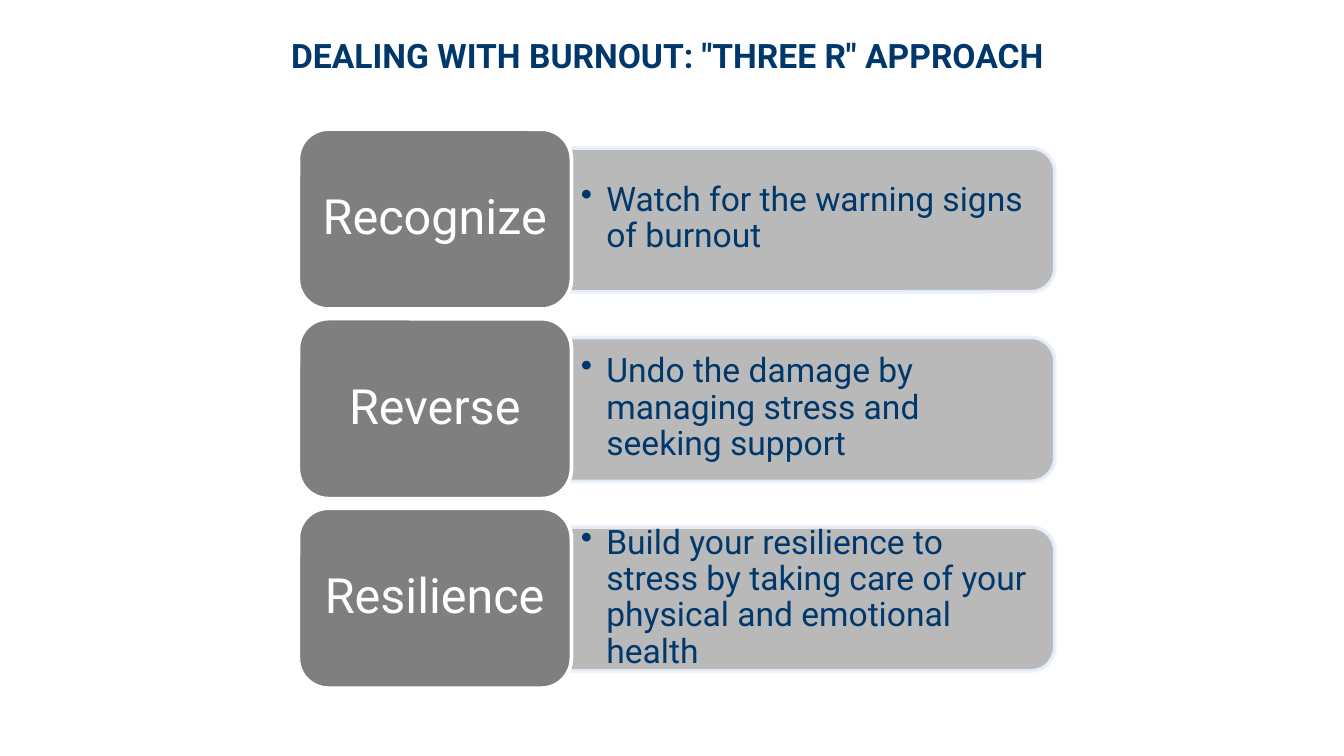
from dataclasses import dataclass

from lxml import etree
from pptx import Presentation, util as u
from pptx.dml.color import RGBColor
from pptx.enum import shapes as sh, text as tx
from pptx.oxml.ns import qn

HUES = {"navy": "00386B", "card": "7F7F7F", "panel": "B2B2B2",
        "edge": "EAF1F9", "white": "FFFFFF"}
PITCH = 3.58


@dataclass
class Step:
    name: str
    note: str


@dataclass
class Box:
    left: float
    top: float
    width: float
    height: float

    def down(self, gap: float) -> tuple:
        return tuple(u.Cm(v) for v in (self.left, self.top + gap, self.width, self.height))


CARD = Box(5.64, 2.44, 5.16, 3.4)
PANEL = Box(13.99, -0.43, 2.72, 9.17)
NOTE = Box(10.8, 2.9, 9.02, 2.46)
TITLE = Box(3.23, 0.64, 18.77, 0.79)

STEPS = [
    Step("Recognize", "Watch for the warning signs of burnout"),
    Step("Reverse", "Undo the damage by managing stress and seeking support"),
    Step("Resilience", "Build your resilience to stress by taking care of your "
                       "physical and emotional health"),
]


def hue(name: str) -> RGBColor:
    return RGBColor.from_string(HUES[name])


def apply(item, props: dict) -> None:
    for key, value in props.items():
        setattr(item, key, value)


def write(shape, words: str, size: int, color: str, pad: tuple, bold: bool = False,
          align=tx.PP_ALIGN.CENTER, bullet: bool = False, space: float = 0.9) -> None:
    frame = shape.text_frame
    side, edge = (u.Cm(v) for v in pad)
    apply(frame, {"text": words, "word_wrap": True, "auto_size": tx.MSO_AUTO_SIZE.NONE,
                  "vertical_anchor": tx.MSO_ANCHOR.MIDDLE,
                  "margin_left": side, "margin_right": side,
                  "margin_top": edge, "margin_bottom": edge})
    para = frame.paragraphs[0]
    apply(para, {"alignment": align, "line_spacing": space})
    if bullet:
        props = para._p.get_or_add_pPr()
        props.set("marL", str(u.Cm(0.48)))
        props.set("indent", str(u.Cm(-0.48)))
        etree.SubElement(props, qn("a:buChar")).set("char", "•")
    font = para.runs[0].font
    apply(font, {"name": "Roboto", "size": u.Pt(size), "bold": bold})
    font.color.rgb = hue(color)


def block(slide, kind, place: tuple, fill: str, edge: str):
    shape = slide.shapes.add_shape(kind, *place)
    shape.shadow.inherit = False
    shape.fill.solid()
    shape.fill.fore_color.rgb = hue(fill)
    shape.line.color.rgb = hue(edge)
    shape.line.width = u.Pt(2)
    return shape


def fade(shape, share: int) -> None:
    for color in shape._element.spPr.iter(qn("a:srgbClr")):
        etree.SubElement(color, qn("a:alpha")).set("val", str(share * 1000))


def draw(slide, step: Step, gap: float) -> None:
    panel = block(slide, sh.MSO_SHAPE.ROUND_2_SAME_RECTANGLE, PANEL.down(gap), "panel", "edge")
    panel.rotation = 90
    fade(panel, 90)
    note = slide.shapes.add_textbox(*NOTE.down(gap))
    write(note, step.note, 18, "navy", (0.18, 0.1), align=tx.PP_ALIGN.LEFT, bullet=True)
    card = block(slide, sh.MSO_SHAPE.ROUNDED_RECTANGLE, CARD.down(gap), "card", "white")
    write(card, step.name, 26, "white", (0.25, 0.13))


def main() -> None:
    deck = Presentation()
    apply(deck, {"slide_width": u.Cm(25.4), "slide_height": u.Cm(14.28)})
    slide = deck.slides.add_slide(deck.slide_layouts[5])
    title = slide.shapes.title
    apply(title, dict(zip(("left", "top", "width", "height"), TITLE.down(0))))
    write(title, 'DEALING WITH BURNOUT: "THREE R" APPROACH', 18, "navy", (0, 0),
          bold=True, space=1.0)
    for row, step in enumerate(STEPS):
        draw(slide, step, row * PITCH)
    deck.save("out.pptx")


if __name__ == "__main__":
    main()
